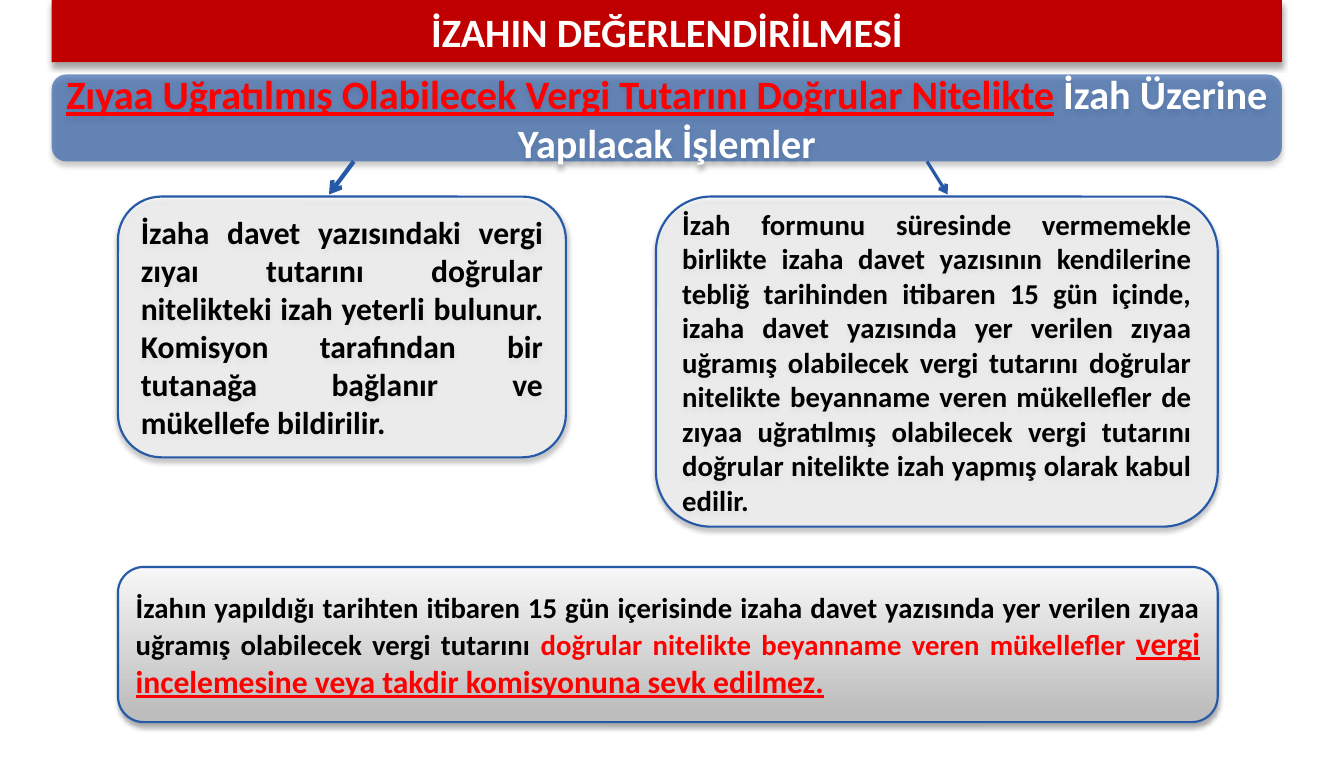
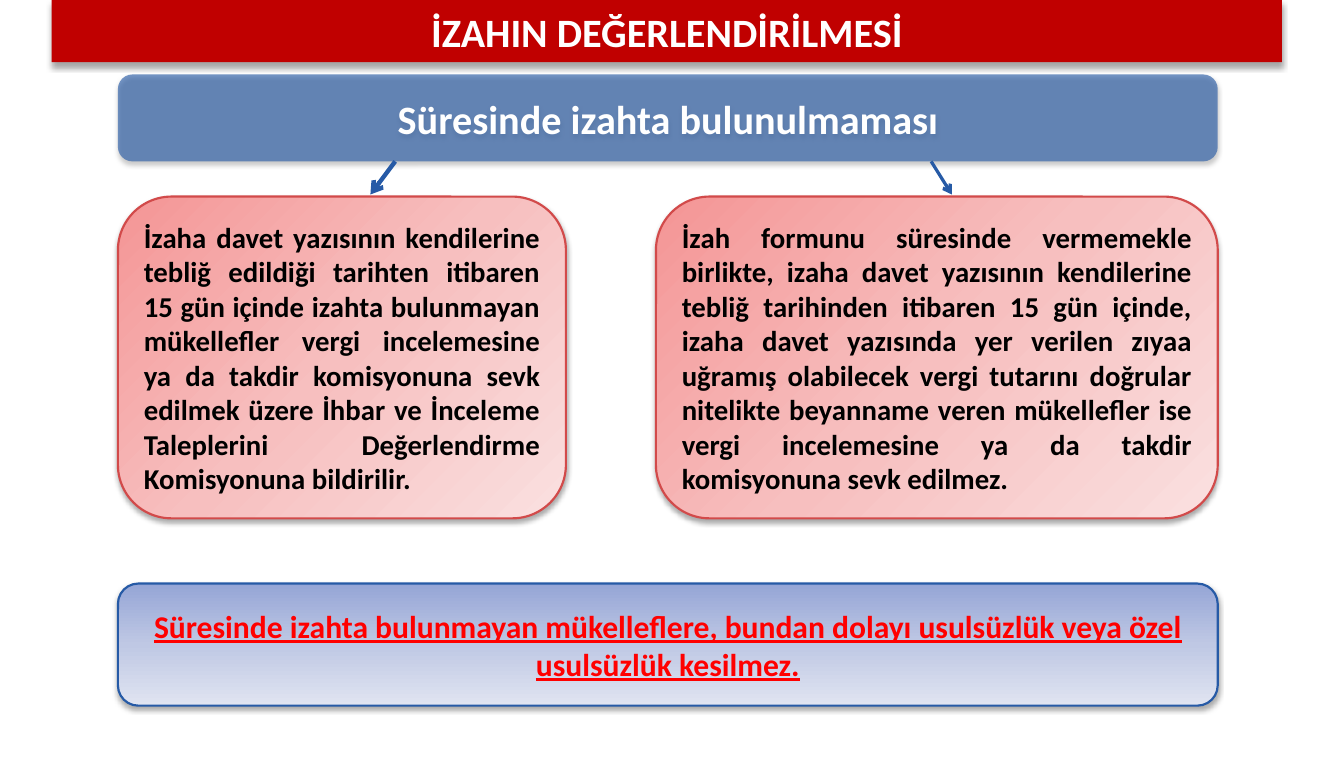
import lxml.etree
import pptx
import pptx.dml.color
import pptx.enum.shapes
import pptx.enum.text
import pptx.oxml.ns
import pptx.util

PX = 9144
SLIDE_SIZE = (1299, 750)
FONT = "Calibri"
COLORS = {
    "title": "C00000", "blue": "265AA6", "white": "FFFFFF", "black": "000000",
    "red": "FF0000", "rose line": "D24A4A",
}
GRADIENTS = {
    "gray": ([(0, "F7F7F7"), (94, "BDBDBD")], 90),
    "rose": ([(0, "F49595"), (50, "F7BFBF"), (100, "FAE0E0")], 45),
    "lavender": ([(0, "95A5D6"), (50, "BFC8E4"), (100, "E0E4F1")], 90),
}
OPACITY = 63
TITLE_SHADOW = {"alpha": 35, "blur": 4, "distance": 3}
BOX_SHADOW = {"alpha": 32, "blur": 3.5, "distance": 2.2}

TITLE = "İZAHIN DEĞERLENDİRİLMESİ"
TITLE_BAND = (50, 0, 1189, 60)
HEADER_TOP, HEADER_HEIGHT = 72, 84
HEADER_BOTTOM = HEADER_TOP + HEADER_HEIGHT
BOX_TOP = 190
BOX_COLUMNS = [(114, 433), (634, 543)]
ARROW_DROP = 32
ARROW_SHIFTS_AND_WEIGHTS = [(-24, 3), (20, 2.25)]
CONTENT_LEFT, CONTENT_WIDTH = 114, 1063

SLIDES = [
    {
        "header": {
            "span": (50, 1189),
            "runs": [
                ("Zıyaa Uğratılmış Olabilecek Vergi Tutarını Doğrular Nitelikte",
                 {"color": "red", "underline": True}),
                (" İzah Üzerine Yapılacak İşlemler", {}),
            ],
        },
        "arrow_starts": [342, 896],
        "box_style": {"fill": "white", "line": "blue", "opacity": OPACITY},
        "boxes": [
            {"height": 252, "size": 22, "text": "İzaha davet yazısındaki vergi zıyaı tutarını doğrular nitelikteki izah yeterli bulunur. Komisyon tarafından bir tutanağa bağlanır ve mükellefe bildirilir."},
            {"height": 319, "size": 20, "text": "İzah formunu süresinde vermemekle birlikte izaha davet yazısının kendilerine tebliğ tarihinden itibaren 15 gün içinde, izaha davet yazısında yer verilen zıyaa uğramış olabilecek vergi tutarını doğrular nitelikte beyanname veren mükellefler de zıyaa uğratılmış olabilecek vergi tutarını doğrular nitelikte izah yapmış olarak kabul edilir."},
        ],
        "note": {
            "top": 548, "height": 150, "fill": "gray", "align": "JUSTIFY",
            "runs": [
                ("İzahın yapıldığı tarihten itibaren 15 gün içerisinde izaha davet yazısında yer verilen zıyaa uğramış olabilecek vergi tutarını ", {}),
                ("doğrular nitelikte beyanname veren mükellefler ", {"color": "red"}),
                ("vergi incelemesine veya takdir komisyonuna sevk edilmez.",
                 {"color": "red", "size": 22, "underline": True}),
            ],
        },
    },
    {
        "header": {
            "span": (CONTENT_LEFT, CONTENT_WIDTH),
            "runs": [("Süresinde izahta bulunulmaması", {})],
        },
        "arrow_starts": [382, 900],
        "box_style": {"fill": "rose", "line": "rose line"},
        "boxes": [
            {"height": 311, "size": 20, "text": "İzaha davet yazısının kendilerine tebliğ edildiği tarihten itibaren 15 gün içinde izahta bulunmayan mükellefler vergi incelemesine ya da takdir komisyonuna sevk edilmek üzere İhbar ve İnceleme Taleplerini Değerlendirme Komisyonuna bildirilir."},
            {"height": 311, "size": 20, "text": "İzah formunu süresinde vermemekle birlikte, izaha davet yazısının kendilerine tebliğ tarihinden itibaren 15 gün içinde, izaha davet yazısında yer verilen zıyaa uğramış olabilecek vergi tutarını doğrular nitelikte beyanname veren mükellefler ise vergi incelemesine ya da takdir komisyonuna sevk edilmez."},
        ],
        "note": {
            "top": 564, "height": 118, "fill": "lavender", "align": "CENTER",
            "runs": [
                ("Süresinde izahta bulunmayan mükelleflere, bundan dolayı usulsüzlük veya özel usulsüzlük kesilmez.",
                 {"color": "red", "size": 22, "underline": True}),
            ],
        },
    },
]


def emu(pixels):
    return pptx.util.Emu(pixels * PX)


def rgb(name):
    return pptx.dml.color.RGBColor.from_string(COLORS[name])


def add_element(parent, tag, **attributes):
    values = {key: str(value) for key, value in attributes.items()}
    return lxml.etree.SubElement(parent, pptx.oxml.ns.qn(tag), values)


def add_color(parent, value, opacity=100):
    color = add_element(parent, "a:srgbClr", val=value)
    if opacity < 100:
        add_element(color, "a:alpha", val=opacity * 1000)


def write_text(shape, runs, size, color="black", align="JUSTIFY"):
    frame = shape.text_frame
    frame.word_wrap = True
    frame.auto_size = pptx.enum.text.MSO_AUTO_SIZE.NONE
    frame.vertical_anchor = pptx.enum.text.MSO_ANCHOR.MIDDLE
    paragraph = frame.paragraphs[0]
    paragraph.alignment = getattr(pptx.enum.text.PP_ALIGN, align)
    for text, run_format in runs:
        run = paragraph.add_run()
        run.text = text
        run.font.name = FONT
        run.font.bold = True
        run.font.size = pptx.util.Pt(run_format.get("size", size))
        run.font.color.rgb = rgb(run_format.get("color", color))
        run.font.underline = run_format.get("underline", False)


def fill_shape(shape, fill, opacity=100):
    if fill in GRADIENTS:
        stops, angle = GRADIENTS[fill]
        shape.fill.gradient()
        shape.fill.gradient_angle = 360 - angle
        stop_list = shape.element.spPr.find(".//" + pptx.oxml.ns.qn("a:gsLst"))
        stop_list.clear()
        for position, color in stops:
            add_color(add_element(stop_list, "a:gs", pos=position * 1000), color)
        return
    shape.fill.solid()
    shape.fill.fore_color.rgb = rgb(fill)
    if opacity < 100:
        color = shape.element.spPr.find(".//" + pptx.oxml.ns.qn("a:srgbClr"))
        add_element(color, "a:alpha", val=opacity * 1000)


def style_shape(shape, fill, line=None, opacity=100, shadow=BOX_SHADOW):
    fill_shape(shape, fill, opacity)
    if line:
        shape.line.color.rgb = rgb(line)
        shape.line.width = pptx.util.Pt(1.5)
    else:
        shape.line.fill.background()
    shape.shadow.inherit = False
    effects = shape.element.spPr.find(pptx.oxml.ns.qn("a:effectLst"))
    outer_shadow = add_element(
        effects, "a:outerShdw", blurRad=pptx.util.Pt(shadow["blur"]),
        dist=pptx.util.Pt(shadow["distance"]), dir=90 * 60000, rotWithShape=0)
    add_color(outer_shadow, COLORS["black"], shadow["alpha"])


def add_box(slide, left, top, width, height, **style):
    shape = slide.shapes.add_shape(
        pptx.enum.shapes.MSO_SHAPE.ROUNDED_RECTANGLE,
        *map(emu, (left, top, width, height)))
    style_shape(shape, **style)
    return shape


def add_arrow(slide, start, shift, weight):
    arrow = slide.shapes.add_connector(
        pptx.enum.shapes.MSO_CONNECTOR.STRAIGHT,
        *map(emu, (start, HEADER_BOTTOM, start + shift, HEADER_BOTTOM + ARROW_DROP)))
    arrow.line.color.rgb = rgb("blue")
    arrow.line.width = pptx.util.Pt(weight)
    add_element(arrow.line._get_or_add_ln(), "a:tailEnd", type="arrow")
    add_element(arrow.element.spPr, "a:effectLst")


def add_title(slide):
    title = slide.shapes.title
    title.left, title.top, title.width, title.height = map(emu, TITLE_BAND)
    style_shape(title, "title", shadow=TITLE_SHADOW)
    write_text(title, [(TITLE, {})], size=28, color="white", align="CENTER")


def build_slide(presentation, content):
    slide = presentation.slides.add_slide(presentation.slide_layouts[5])
    add_title(slide)

    left, width = content["header"]["span"]
    header = add_box(slide, left, HEADER_TOP, width, HEADER_HEIGHT,
                     fill="blue", opacity=OPACITY)
    write_text(header, content["header"]["runs"], size=28, color="white", align="CENTER")

    for (left, width), box in zip(BOX_COLUMNS, content["boxes"]):
        shape = add_box(slide, left, BOX_TOP, width, box["height"], **content["box_style"])
        write_text(shape, [(box["text"], {})], size=box["size"])

    for start, (shift, weight) in zip(content["arrow_starts"], ARROW_SHIFTS_AND_WEIGHTS):
        add_arrow(slide, start, shift, weight)

    note = content["note"]
    shape = add_box(slide, CONTENT_LEFT, note["top"], CONTENT_WIDTH, note["height"],
                    fill=note["fill"], line="blue")
    write_text(shape, note["runs"], size=20, align=note["align"])


def main():
    presentation = pptx.Presentation()
    presentation.slide_width, presentation.slide_height = map(emu, SLIDE_SIZE)
    for content in SLIDES:
        build_slide(presentation, content)
    presentation.save("out.pptx")


if __name__ == "__main__":
    main()
